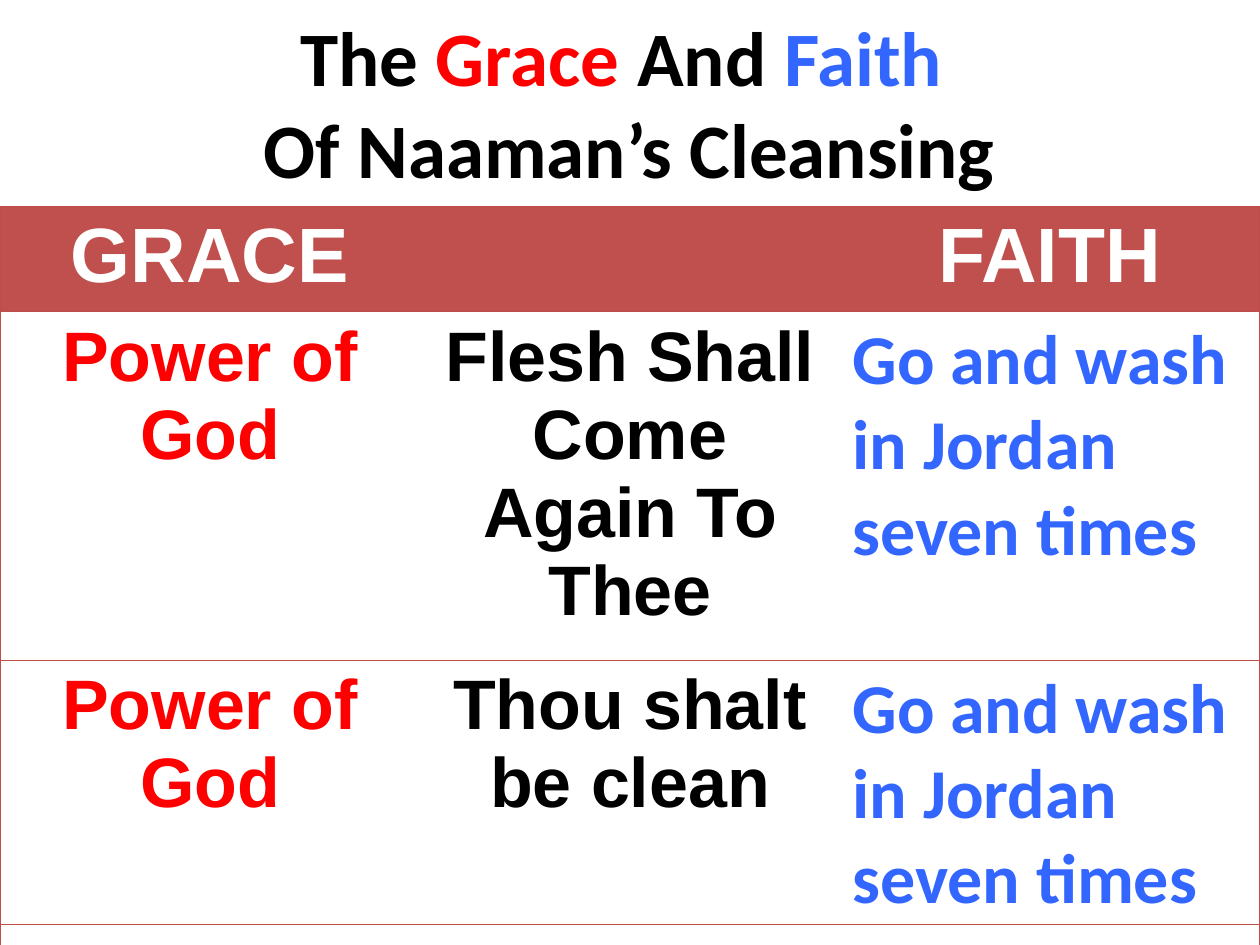
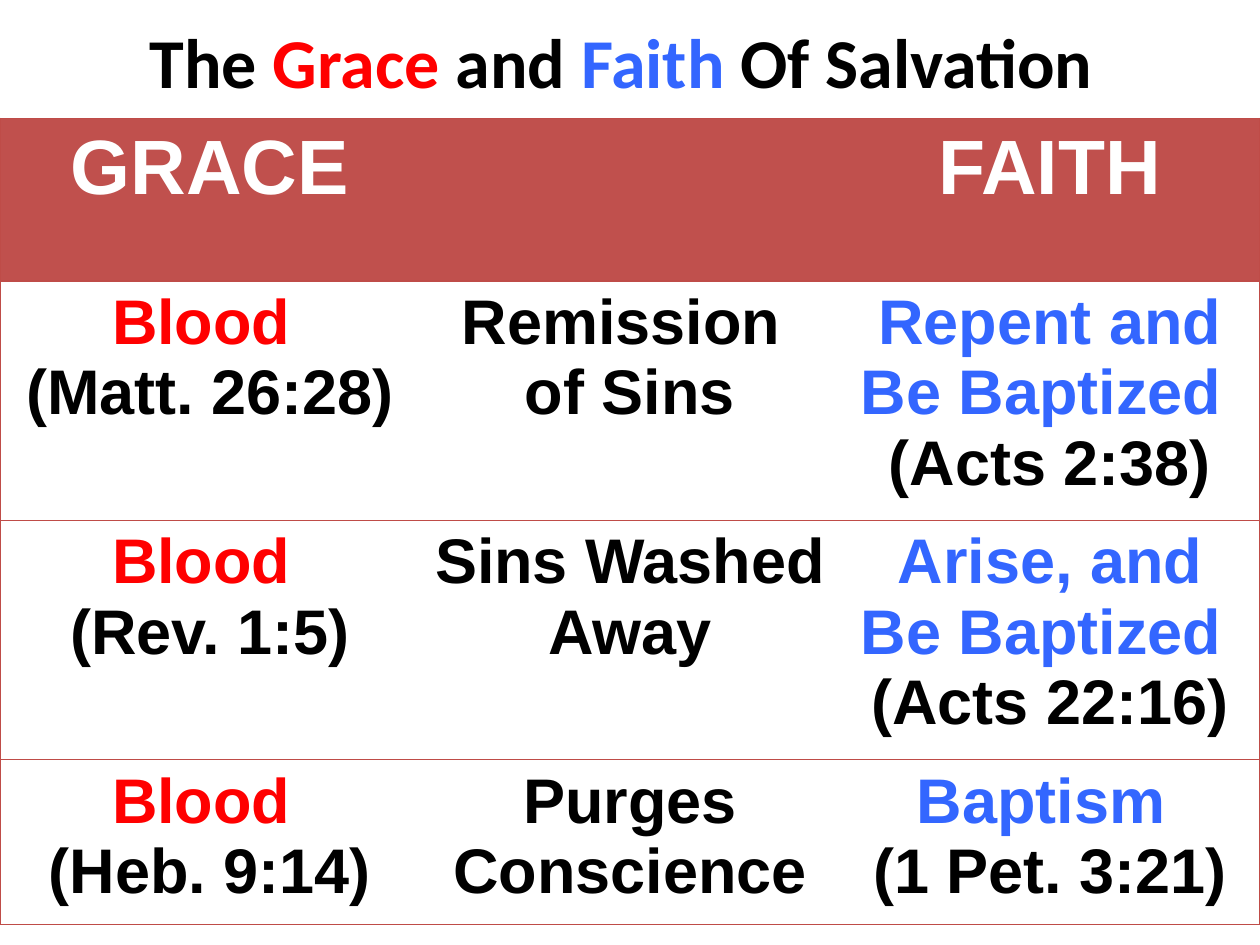
import lxml.etree
import pptx
import pptx.dml.color
import pptx.enum.text
import pptx.oxml.ns
import pptx.util

Inches = pptx.util.Inches
ALIGN = pptx.enum.text.PP_ALIGN
COLORS = {"text": "000000", "grace": "FF0000", "faith": "3366FF",
          "header": "C0504D", "header_text": "FFFFFF", "rule": "BF4C48"}
PLAIN_STYLE = "{2D5ABB26-0587-4C30-8999-92F81FD0307C}"
COLUMNS = 3
RULE_WIDTH = 0.75
HEADER = [[[("GRACE", "header_text")]], [], [[("FAITH", "header_text")]]]


def rgb(name):
    """Return the named colour."""
    return pptx.dml.color.RGBColor.from_string(COLORS[name])


def add_runs(p, runs, size, face):
    """Add bold coloured runs; a newline run becomes a line break."""
    for text, color in runs:
        if text == "\n":
            p.add_line_break()
            continue
        r = p.add_run()
        r.text = text
        r.font.color.rgb = rgb(color)
        font = {"name": face, "size": pptx.util.Pt(size), "bold": True}
        for key, value in font.items():
            setattr(r.font, key, value)


def fill_text(tf, paragraphs, size, face, align=ALIGN.CENTER):
    """Write paragraphs of runs into a text frame."""
    for i, runs in enumerate(paragraphs):
        p = tf.add_paragraph() if i else tf.paragraphs[0]
        p.alignment = align
        add_runs(p, runs, size, face)


def add_title(s, box, runs, size):
    """Add the centred slide title."""
    tf = s.shapes.add_textbox(*map(Inches, box)).text_frame
    frame = {"word_wrap": True,
             "vertical_anchor": pptx.enum.text.MSO_ANCHOR.MIDDLE}
    for key, value in frame.items():
        setattr(tf, key, value)
    fill_text(tf, [runs], size, "Calibri")


def add_borders(cell, sides):
    """Draw thin rules on the given sides of a cell."""
    tag = pptx.oxml.ns.qn
    tc_pr = cell._tc.get_or_add_tcPr()
    for side in sides:
        ln = lxml.etree.SubElement(tc_pr, tag(f"a:ln{side}"),
                                   w=str(pptx.util.Pt(RULE_WIDTH)))
        fill = lxml.etree.SubElement(ln, tag("a:solidFill"))
        lxml.etree.SubElement(fill, tag("a:srgbClr"), val=COLORS["rule"])


def add_grace_table(s, top, heights, body, size, faith_face="Arial",
                    faith_align=ALIGN.CENTER):
    """Add the full-width table with a grace and a faith column."""
    frame = s.shapes.add_table(len(heights), COLUMNS, 0, Inches(top),
                               Inches(10), Inches(sum(heights)))
    table = frame.table
    style = next(frame._element.iter(pptx.oxml.ns.qn("a:tableStyleId")))
    style.text = PLAIN_STYLE
    table.horz_banding = False
    for row, height in zip(table.rows, heights):
        row.height = Inches(height)
    for i, cells in enumerate([HEADER] + body):
        for j, paragraphs in enumerate(cells):
            cell = table.cell(i, j)
            sides = ["L"] * (j == 0) + ["R"] * (j == COLUMNS - 1)
            add_borders(cell, sides + ["T", "B"])
            if i == 0:
                cell.fill.solid()
                cell.fill.fore_color.rgb = rgb("header")
                fill_text(cell.text_frame, paragraphs, 44, "Arial")
                continue
            cell.fill.background()
            if j == COLUMNS - 1:
                fill_text(cell.text_frame, paragraphs, size, faith_face,
                          faith_align)
            else:
                fill_text(cell.text_frame, paragraphs, size, "Arial")


def cleansing_row(promise):
    """Return one row on Naaman's cleansing."""
    return [[[("Power of God", "grace")]], [[(promise, "text")]],
            [[("Go and wash in Jordan seven times", "faith")]]]


def salvation_row(grace_verse, result, deed, faith_verse):
    """Return one row on salvation, with its verses."""
    return [[[("Blood ", "grace")], [(grace_verse, "text")]],
            [[(line, "text")] for line in result],
            [[(deed, "faith")], [(faith_verse, "text")]]]


def main():
    """Build both slides and save the file."""
    prs = pptx.Presentation()
    prs.slide_width, prs.slide_height = Inches(10), Inches(7.5)
    blank = prs.slide_layouts[6]

    s = prs.slides.add_slide(blank)
    add_title(s, (0.75, 0, 8.5, 1.61),
              [("The ", "text"), ("Grace ", "grace"), ("And ", "text"),
               ("Faith ", "faith"), ("\n", "text"),
               ("Of Naaman’s Cleansing", "text")], 44)
    add_grace_table(s, 1.64, [0.83, 2.1, 2.1, 1.39],
                    [cleansing_row("Flesh Shall Come Again To Thee"),
                     cleansing_row("Thou shalt be clean"),
                     [[]] * COLUMNS],
                    40, "Calibri", ALIGN.LEFT)

    s = prs.slides.add_slide(blank)
    add_title(s, (0.75, 0.03, 8.36, 0.9),
              [("The ", "text"), ("Grace ", "grace"), ("and ", "text"),
               ("Faith ", "faith"), ("Of Salvation", "text")], 40)
    add_grace_table(s, 0.94, [1.29, 1.9, 1.9, 1.31], [
        salvation_row("(Matt. 26:28)", ["Remission ", "of Sins"],
                      "Repent and Be Baptized ", "(Acts 2:38)"),
        salvation_row("(Rev. 1:5)", ["Sins Washed Away"],
                      "Arise, and Be Baptized ", "(Acts 22:16)"),
        salvation_row("(Heb. 9:14)", ["Purges Conscience"],
                      "Baptism ", "(1 Pet. 3:21)")], 36)
    prs.save("out.pptx")


if __name__ == "__main__":
    main()
